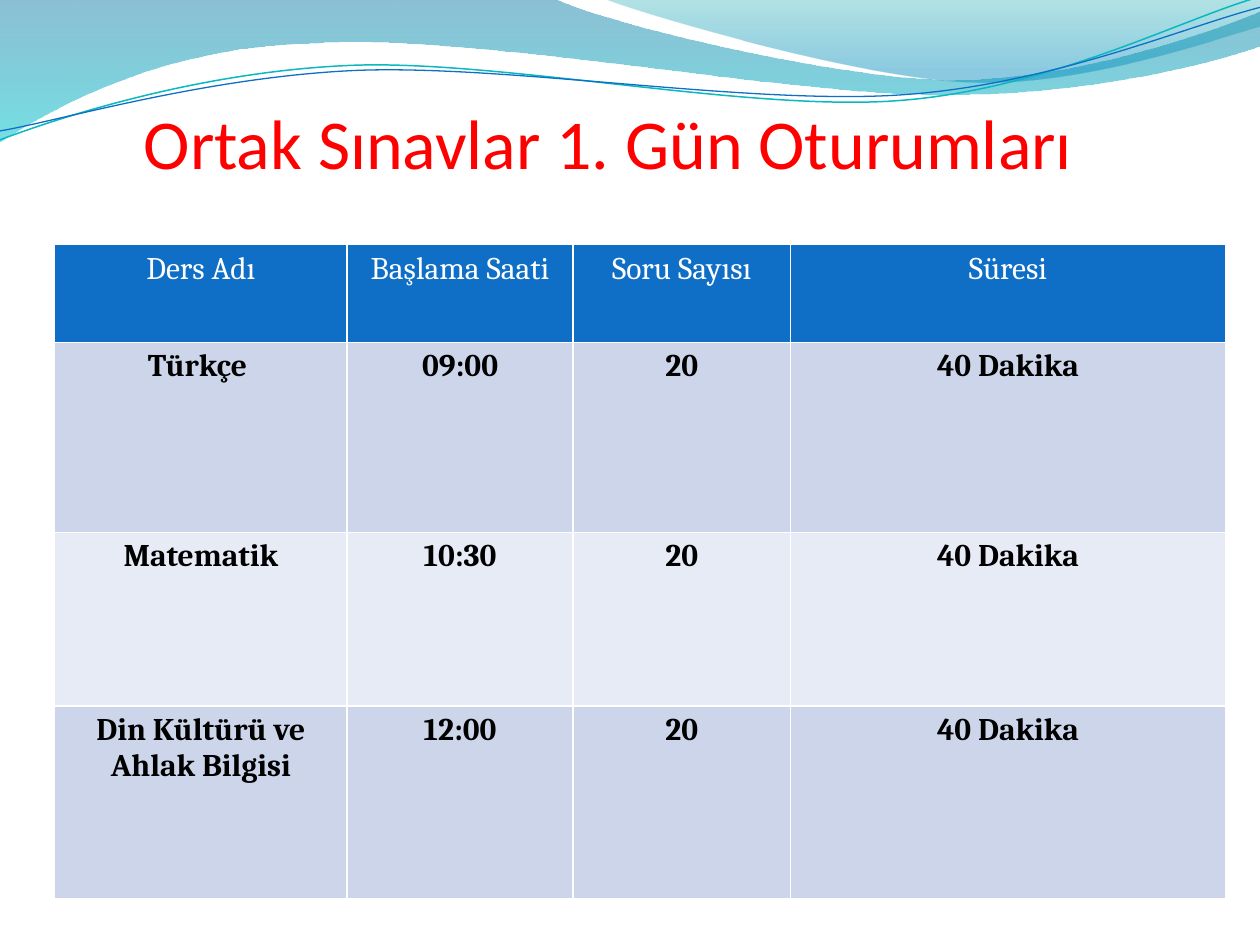
from lxml.etree import SubElement
from pptx import Presentation
from pptx.dml.color import RGBColor as Color
from pptx.enum.text import MSO_ANCHOR as Anchor, PP_ALIGN as Align
from pptx.oxml.ns import qn
from pptx.util import Cm, Pt

# Content
TITLE = "Ortak Sınavlar 1. Gün Oturumları"
EXAMS = [
    ("Ders Adı", "Başlama Saati", "Soru Sayısı", "Süresi"),
    ("Türkçe ", "09:00", "20", "40 Dakika"),
    ("Matematik", "10:30", "20", "40 Dakika"),
    ("Din Kültürü ve Ahlak Bilgisi", "12:00", "20", "40 Dakika"),
]

THEME = {
    "title": {"font": "Calibri", "size": 40, "color": "FF0000", "bold": False},
    "header": {"font": "Cambria", "size": 18, "color": "FFFFFF", "bold": False},
    "body": {"font": "Cambria", "size": 18, "color": "000000", "bold": True},
    "header_fill": "0F6FC6",
    "band_fills": ("CCD5EA", "E7EBF5"),
    "border": "FFFFFF",
    "border_width": 1,
}

# Geometry in centimetres
SLIDE_SIZE = (25.4, 19.05)
TITLE_BOX = (2.9, 1.31, 20.12, 2.38)
TABLE_ORIGIN = (1.1, 4.93)
COLUMN_WIDTHS = (5.9, 4.55, 4.39, 8.76)
ROW_HEIGHTS = (1.97, 3.83, 3.5, 3.88)

# Outlines: a start point, then steps of one point (line) or three (curve)
# Gradient stops: position, colour, opacity in percent
WAVES = [
    {"outline": [((0, 0),), ((11.18, -0.03),),
                 ((12.09, 0.43), (16.87, 1.6), (19.25, 1.6)),
                 ((21.67, 1.6), (24.33, 0.66), (25.4, 0.23)),
                 ((25.43, 0.91),),
                 ((24.97, 1.12), (22.1, 1.93), (18.95, 1.91)),
                 ((15.8, 1.91), (9.7, 0.71), (6.53, 0.86)),
                 ((3.28, 0.91), (1.17, 2.11), (-0.03, 2.87)),
                 ((0, 0),)],
     "stops": [(0, "0074A1", 45), (100, "00C6CF", 55)]},
    {"outline": [((12.17, -0.03),),
                 ((12.93, 0.28), (17.32, 1.57), (19.53, 1.65)),
                 ((21.74, 1.75), (24.41, 0.81), (25.4, 0.53)),
                 ((25.4, 0),), ((12.17, -0.03),)],
     "stops": [(0, "00A1A9", 30), (80, "008BBF", 45)]},
    {"outline": [((0, 2.82),),
                 ((1.22, 2.36), (4.01, 1.45), (7.04, 1.32)),
                 ((10.03, 1.19), (15.06, 2.26), (18.11, 2.03)),
                 ((21.16, 1.8), (23.83, 0.38), (25.35, -0.05))],
     "line": ("0AB8BF", 0.85)},
    {"outline": [((0, 2.64),),
                 ((1.19, 2.44), (4.17, 1.55), (7.19, 1.42)),
                 ((10.24, 1.3), (15.16, 2.13), (18.21, 1.91)),
                 ((21.23, 1.7), (23.9, 0.53), (25.4, 0.15))],
     "line": ("0F6FC6", 0.75)},
]


def rgb(value):
    return Color.from_string(value)


def add_outline(slide, outline, closed):
    """Build a freeform, joining each step of three points into one curve."""
    start, *points = [(Cm(x), Cm(y)) for step in outline for x, y in step]
    builder = slide.shapes.build_freeform(*start)
    builder.add_line_segments(points, close=closed)
    shape = builder.convert_to_shape()
    segments = iter(list(shape._element.iter(qn("a:lnTo"))))
    for step in outline[1:]:
        first, *others = [next(segments) for _ in step]
        if others:
            first.tag = qn("a:cubicBezTo")
            for segment in others:
                first.append(segment[0])
                segment.getparent().remove(segment)
    return shape


def add_wave(slide, wave):
    shape = add_outline(slide, wave["outline"], "stops" in wave)
    shape.shadow.inherit = False
    if "line" in wave:
        color, width = wave["line"]
        shape.fill.background()
        shape.line.color.rgb = rgb(color)
        shape.line.width = Pt(width)
        return
    shape.line.fill.background()
    shape.fill.gradient()
    shape.fill.gradient_angle = 270
    for stop, (position, color, _) in zip(shape.fill.gradient_stops, wave["stops"]):
        stop.position = position / 100
        stop.color.rgb = rgb(color)
    color_elements = list(shape._element.spPr.iter(qn("a:srgbClr")))
    for element, (_, _, opacity) in zip(color_elements, wave["stops"]):
        SubElement(element, qn("a:alpha"), val=str(opacity * 1000))


def add_run(paragraph, text, style):
    run = paragraph.add_run()
    run.text = text
    run.font.name = style["font"]
    run.font.size = Pt(style["size"])
    run.font.bold = style["bold"]
    run.font.color.rgb = rgb(style["color"])


def add_title(slide):
    frame = slide.shapes.add_textbox(*map(Cm, TITLE_BOX)).text_frame
    frame.word_wrap = True
    frame.vertical_anchor = Anchor.BOTTOM
    frame.margin_left = frame.margin_right = frame.margin_bottom = 0
    add_run(frame.paragraphs[0], TITLE, THEME["title"])


def set_borders(cell):
    properties = cell._tc.get_or_add_tcPr()
    for side in "LRTB":
        line = SubElement(properties, qn(f"a:ln{side}"), w=str(Pt(THEME["border_width"])))
        fill = SubElement(line, qn("a:solidFill"))
        SubElement(fill, qn("a:srgbClr"), val=THEME["border"])


def add_exam_table(slide):
    size = (sum(COLUMN_WIDTHS), sum(ROW_HEIGHTS))
    table = slide.shapes.add_table(len(EXAMS), len(EXAMS[0]),
                                   *map(Cm, TABLE_ORIGIN + size)).table
    for column, width in zip(table.columns, COLUMN_WIDTHS):
        column.width = Cm(width)
    for row, height in zip(table.rows, ROW_HEIGHTS):
        row.height = Cm(height)
    for row_index, texts in enumerate(EXAMS):
        is_header = row_index == 0
        band = THEME["band_fills"][(row_index - 1) % 2]
        for column_index, text in enumerate(texts):
            cell = table.cell(row_index, column_index)
            set_borders(cell)
            cell.fill.solid()
            cell.fill.fore_color.rgb = rgb(THEME["header_fill"] if is_header else band)
            paragraph = cell.text_frame.paragraphs[0]
            paragraph.alignment = Align.CENTER
            add_run(paragraph, text, THEME["header" if is_header else "body"])


def main():
    presentation = Presentation()
    presentation.slide_width, presentation.slide_height = map(Cm, SLIDE_SIZE)
    slide = presentation.slides.add_slide(presentation.slide_layouts[6])
    # Decorative waves behind the content
    for wave in WAVES:
        add_wave(slide, wave)
    add_title(slide)
    add_exam_table(slide)
    presentation.save("out.pptx")


if __name__ == "__main__":
    main()
